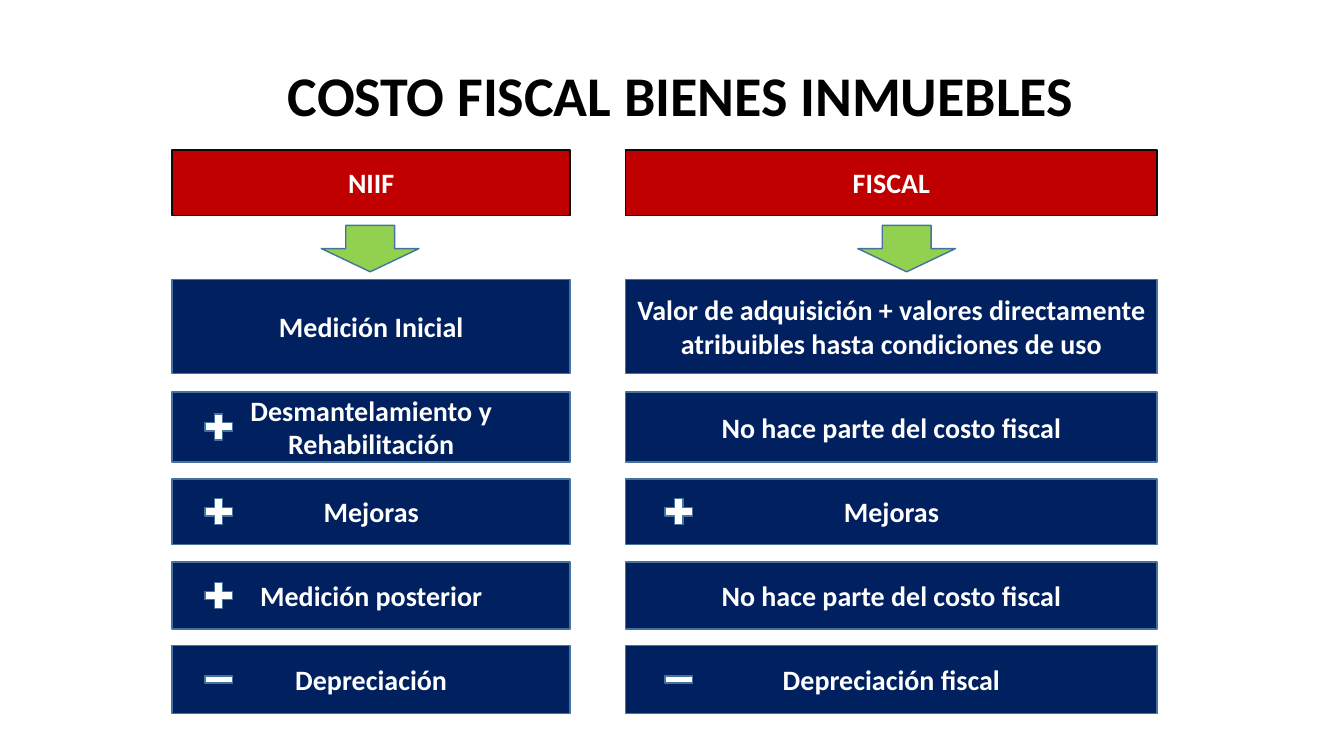
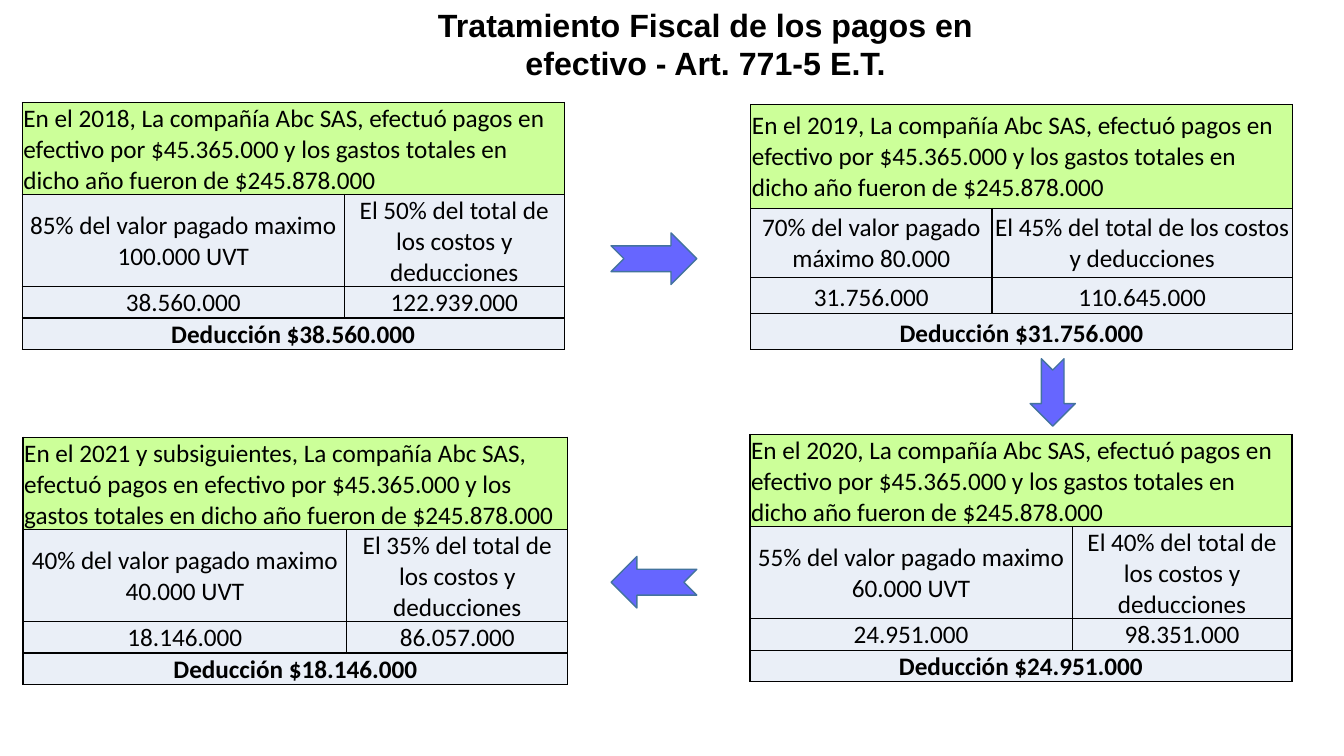
from lxml.etree import SubElement
from pptx import Presentation
from pptx.dml.color import RGBColor
from pptx.enum.shapes import MSO_SHAPE as Shape
from pptx.enum.text import MSO_ANCHOR as Anchor, PP_ALIGN as Align
from pptx.oxml.ns import qn
from pptx.util import Cm, Pt

BLACK, WHITE = "000000", "FFFFFF"
RED, NAVY, GREEN = "C00000", "002060", "92D050"
LIME, PALE, VIOLET = "CCFF99", "EAEFF7", "6666FF"
HEADER_LINE, SHAPE_LINE = "0D0D0D", "43739E"
PLUS, MINUS = Shape.MATH_PLUS, Shape.MATH_MINUS

COLUMNS = [
    {"left": 4.34, "width": 10.03, "heading": "NIIF", "arrow": 8.1, "sign": 0.7},
    {"left": 15.77, "width": 13.39, "heading": "FISCAL", "arrow": 21.62, "sign": 0.87},
]
COST_ROWS = [
    (7.05, 2.36, [("Medición Inicial", None),
                  ("Valor de adquisición + valores directamente "
                   "atribuibles hasta condiciones de uso", None)]),
    (9.88, 1.76, [("Desmantelamiento y Rehabilitación", PLUS),
                  ("No hace parte del costo fiscal", None)]),
    (12.07, 1.65, [("Mejoras", PLUS), ("Mejoras", PLUS)]),
    (14.16, 1.69, [("Medición posterior", PLUS),
                   ("No hace parte del costo fiscal", None)]),
    (16.27, 1.71, [("Depreciación", MINUS), ("Depreciación fiscal", MINUS)]),
]

TALL_ROWS = [2.32, 2.32, 0.78, 0.78]
PAYMENT_TABLES = [
    (0.56, 2.58, [8.12, 5.54], TALL_ROWS, "2018",
     "85% del valor pagado maximo 100.000 UVT", "50%", "38.560.000", "122.939.000"),
    (18.92, 2.63, [6.08, 7.57], [2.62, 1.75, 0.9, 0.9], "2019",
     "70% del valor pagado máximo 80.000", "45%", "31.756.000", "110.645.000"),
    (18.9, 10.95, [8.12, 5.54], TALL_ROWS, "2020",
     "55% del valor pagado maximo 60.000 UVT", "40%", "24.951.000", "98.351.000"),
    (0.58, 11.02, [8.16, 5.57], TALL_ROWS, "2021 y subsiguientes",
     "40% del valor pagado maximo 40.000 UVT", "35%", "18.146.000", "86.057.000"),
]
STEP_ARROWS = [(15.4, 5.87, 2.16, 1.3, 0), (15.4, 14.02, 2.16, 1.3, 180),
               (25.68, 9.32, 1.7, 1.14, 90)]


def color(value):
    return RGBColor.from_string(value)


def write(frame, text, size, ink, bold=True, font="Calibri", align=Align.CENTER):
    frame.text = text
    frame.word_wrap = True
    para = frame.paragraphs[0]
    para.alignment = align
    for span in para.runs:
        span.font.name = font
        span.font.size = Pt(size)
        span.font.bold = bold
        span.font.color.rgb = color(ink)
    return para


def add_title(page, place, text, size, font, anchor):
    box = page.shapes.add_textbox(*map(Cm, place))
    para = write(box.text_frame, text, size, BLACK, font=font)
    box.text_frame.vertical_anchor = anchor
    return para


def add_figure(page, kind, place, fill, line=SHAPE_LINE, turn=0):
    figure = page.shapes.add_shape(kind, *map(Cm, place))
    figure.shadow.inherit = False
    figure.fill.solid()
    figure.fill.fore_color.rgb = color(fill)
    figure.line.color.rgb = color(line)
    figure.line.width = Pt(1)
    figure.rotation = turn
    return figure


def add_panel(page, place, text, fill, line=SHAPE_LINE):
    panel = add_figure(page, Shape.RECTANGLE, place, fill, line)
    write(panel.text_frame, text, 20, WHITE)
    panel.text_frame.vertical_anchor = Anchor.MIDDLE


def add_sign(page, kind, left, middle):
    height = 0.89 if kind == PLUS else 0.76
    add_figure(page, kind, (left, middle - height / 2, 0.94, height), WHITE)


def add_borders(cell):
    properties = cell._tc.get_or_add_tcPr()
    for side in ("lnL", "lnR", "lnT", "lnB"):
        border = SubElement(properties, qn(f"a:{side}"), w=str(Pt(1)))
        fill = SubElement(border, qn("a:solidFill"))
        SubElement(fill, qn("a:srgbClr"), val=BLACK)


def style_cell(cell, fill, anchor):
    add_borders(cell)
    cell.fill.solid()
    cell.fill.fore_color.rgb = color(fill)
    cell.vertical_anchor = anchor
    cell.margin_left = cell.margin_right = cell.margin_top = Cm(0.03)
    cell.margin_bottom = 0


def add_payment_table(page, left, top, widths, heights, year, limit, share, paid, total):
    texts = [
        [f"En el {year}, La compañía Abc SAS, efectuó pagos en efectivo por "
         "$45.365.000 y los gastos totales en dicho año fueron de $245.878.000"],
        [limit, f"El {share} del total de los costos y deducciones"],
        [paid, total],
        [f"Deducción ${paid}"],
    ]
    frame = page.shapes.add_table(4, 2, Cm(left), Cm(top), Cm(sum(widths)), Cm(sum(heights)))
    table = frame.table
    for column, width in zip(table.columns, widths):
        column.width = Cm(width)
    for index, (row, height, values) in enumerate(zip(table.rows, heights, texts)):
        row.height = Cm(height)
        for cell in row.cells:
            style_cell(cell, PALE if index else LIME,
                       Anchor.MIDDLE if index < 2 else Anchor.BOTTOM)
        if len(values) == 1:
            table.cell(index, 0).merge(table.cell(index, 1))
        for cell, value in zip(row.cells, values):
            write(cell.text_frame, value, 18, BLACK, bold=index == 3,
                  align=Align.CENTER if index else Align.LEFT)


def build_cost_page(page):
    title = add_title(page, (5.72, 1.57, 22.86, 1.8), "COSTO FISCAL BIENES INMUEBLES",
                      40, "Calibri", Anchor.BOTTOM)
    title.line_spacing = 0.9
    for index, column in enumerate(COLUMNS):
        left, width = column["left"], column["width"]
        add_panel(page, (left, 3.78, width, 1.65), column["heading"], RED, HEADER_LINE)
        add_figure(page, Shape.DOWN_ARROW, (column["arrow"], 5.68, 2.46, 1.17), GREEN)
        for top, height, entries in COST_ROWS:
            text, sign = entries[index]
            add_panel(page, (left, top, width, height), text, NAVY)
            if sign:
                add_sign(page, sign, left + column["sign"], top + height / 2)


def build_payment_page(page):
    add_title(page, (9.32, 0, 16.94, 2.31),
              "Tratamiento Fiscal de los pagos en efectivo - Art. 771-5 E.T.",
              23, "Arial", Anchor.TOP)
    for entry in PAYMENT_TABLES:
        add_payment_table(page, *entry)
    for *place, turn in STEP_ARROWS:
        add_figure(page, Shape.NOTCHED_RIGHT_ARROW, place, VIOLET, turn=turn)


def main():
    deck = Presentation()
    deck.slide_width, deck.slide_height = Cm(33.87), Cm(19.05)
    for build in (build_cost_page, build_payment_page):
        build(deck.slides.add_slide(deck.slide_layouts[6]))
    deck.save("out.pptx")


if __name__ == "__main__":
    main()
